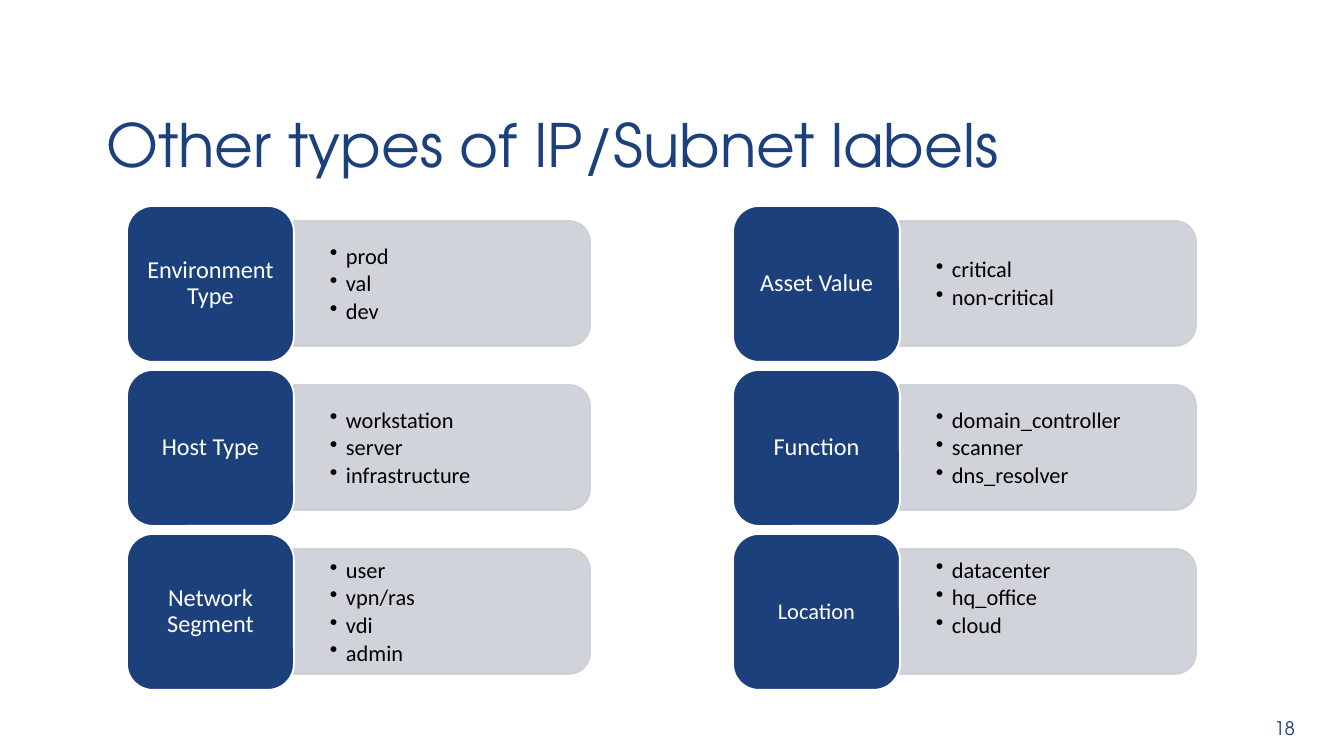
from lxml import etree
from pptx import Presentation
from pptx import util as u
from pptx.dml.color import RGBColor
from pptx.enum import shapes, text
from pptx.oxml.ns import qn

EMU_PER_PX = 914400 / 134.4

NAVY = RGBColor(0x1C, 0x40, 0x7C)
GREY = RGBColor(0xCD, 0xCF, 0xD7)
WHITE = RGBColor(0xFF, 0xFF, 0xFF)
BLACK = RGBColor(0, 0, 0)
HEADING_FONT = "TeX Gyre Adventor"
BODY_FONT = "Calibri"

# Card grid
COLUMN_LEFTS = (127, 733)
FIRST_TOP, ROW_PITCH = 206, 164
LABEL_WIDTH, LABEL_HEIGHT = 167, 156
BAR_WIDTH, BAR_HEIGHT = 296, 125

# Per column: label, label size in points, examples, upward shift of the examples
COLUMNS = (
    (("Environment Type", 13, ("prod", "val", "dev"), 0),
     ("Host Type", 13, ("workstation", "server", "infrastructure"), 0),
     ("Network Segment", 13, ("user", "vpn/ras", "vdi", "admin"), 0)),
    (("Asset Value", 13, ("critical", "non-critical"), 0),
     ("Function", 13, ("domain_controller", "scanner", "dns_resolver"), 0),
     ("Location", 12, ("datacenter", "hq_office", "cloud"), 14)),
)


def px(length):
    return u.Emu(round(length * EMU_PER_PX))


def set_insets(frame, left, top, right, bottom):
    frame.margin_left, frame.margin_top = px(left), px(top)
    frame.margin_right, frame.margin_bottom = px(right), px(bottom)


def style(paragraph, font, size, color, align=text.PP_ALIGN.LEFT, spacing=0.9, after=0):
    paragraph.alignment = align
    paragraph.line_spacing = spacing
    paragraph.space_after = u.Pt(after)
    for run in paragraph.runs:
        run.font.name = font
        run.font.size = u.Pt(size)
        run.font.color.rgb = color


def add_text(slide, left, top, width, height, words, anchor):
    frame = slide.shapes.add_textbox(px(left), px(top), px(width), px(height)).text_frame
    frame.word_wrap = True
    frame.vertical_anchor = anchor
    frame.text = words
    return frame


def add_block(slide, kind, left, top, width, height, fill, line):
    block = slide.shapes.add_shape(kind, px(left), px(top), px(width), px(height))
    block.shadow.inherit = False
    block.fill.solid()
    block.fill.fore_color.rgb = fill
    block.line.color.rgb = line
    block.line.width = u.Pt(1)
    return block


def add_bar(slide, left, top):
    # The shape is rounded at its top, so it is turned to round the right end
    shift = (BAR_WIDTH - BAR_HEIGHT) / 2
    bar = add_block(slide, shapes.MSO_SHAPE.ROUND_2_SAME_RECTANGLE,
                    left + shift, top - shift, BAR_HEIGHT, BAR_WIDTH, GREY, GREY)
    bar.rotation = 90
    for color in bar._element.spPr.iter(qn("a:srgbClr")):
        etree.SubElement(color, qn("a:alpha"), val="90000")


def add_examples(slide, left, top, examples, lift):
    frame = add_text(slide, left, top, 290, 113, "\n".join(examples), text.MSO_ANCHOR.MIDDLE)
    set_insets(frame, 36, 19 - lift, 36, 19 + lift)
    for paragraph in frame.paragraphs:
        properties = paragraph._p.get_or_add_pPr()
        properties.set("marL", str(px(16)))
        properties.set("indent", str(px(-16)))
        etree.SubElement(properties, qn("a:buChar"), char="•")
        style(paragraph, BODY_FONT, 12, BLACK, after=1.8)


def add_label(slide, left, top, name, size):
    label = add_block(slide, shapes.MSO_SHAPE.ROUNDED_RECTANGLE,
                      left, top, LABEL_WIDTH, LABEL_HEIGHT, NAVY, WHITE)
    frame = label.text_frame
    frame.word_wrap = True
    frame.vertical_anchor = text.MSO_ANCHOR.MIDDLE
    set_insets(frame, 7, 4, 7, 4)
    frame.text = name
    style(frame.paragraphs[0], BODY_FONT, size, WHITE, text.PP_ALIGN.CENTER)


def add_card(slide, left, top, name, size, examples, lift):
    bar_left = left + LABEL_WIDTH
    add_bar(slide, bar_left, top + 15)
    add_examples(slide, bar_left, top + 22, examples, lift)
    add_label(slide, left, top, name, size)


def main():
    deck = Presentation()
    deck.slide_width, deck.slide_height = px(1344), px(756)
    slide = deck.slides.add_slide(deck.slide_layouts[6])

    # Title and page number
    title = add_text(slide, 93, 70, 1159, 117, "Other types of IP/Subnet labels",
                     text.MSO_ANCHOR.BOTTOM)
    style(title.paragraphs[0], HEADING_FONT, 32, NAVY)
    number = add_text(slide, 1238, 710, 70, 40, "18", text.MSO_ANCHOR.TOP)
    style(number.paragraphs[0], HEADING_FONT, 10, NAVY, text.PP_ALIGN.RIGHT, spacing=1.0)

    # Label cards
    for left, cards in zip(COLUMN_LEFTS, COLUMNS):
        for row, card in enumerate(cards):
            add_card(slide, left, FIRST_TOP + row * ROW_PITCH, *card)

    deck.save("out.pptx")


if __name__ == "__main__":
    main()
